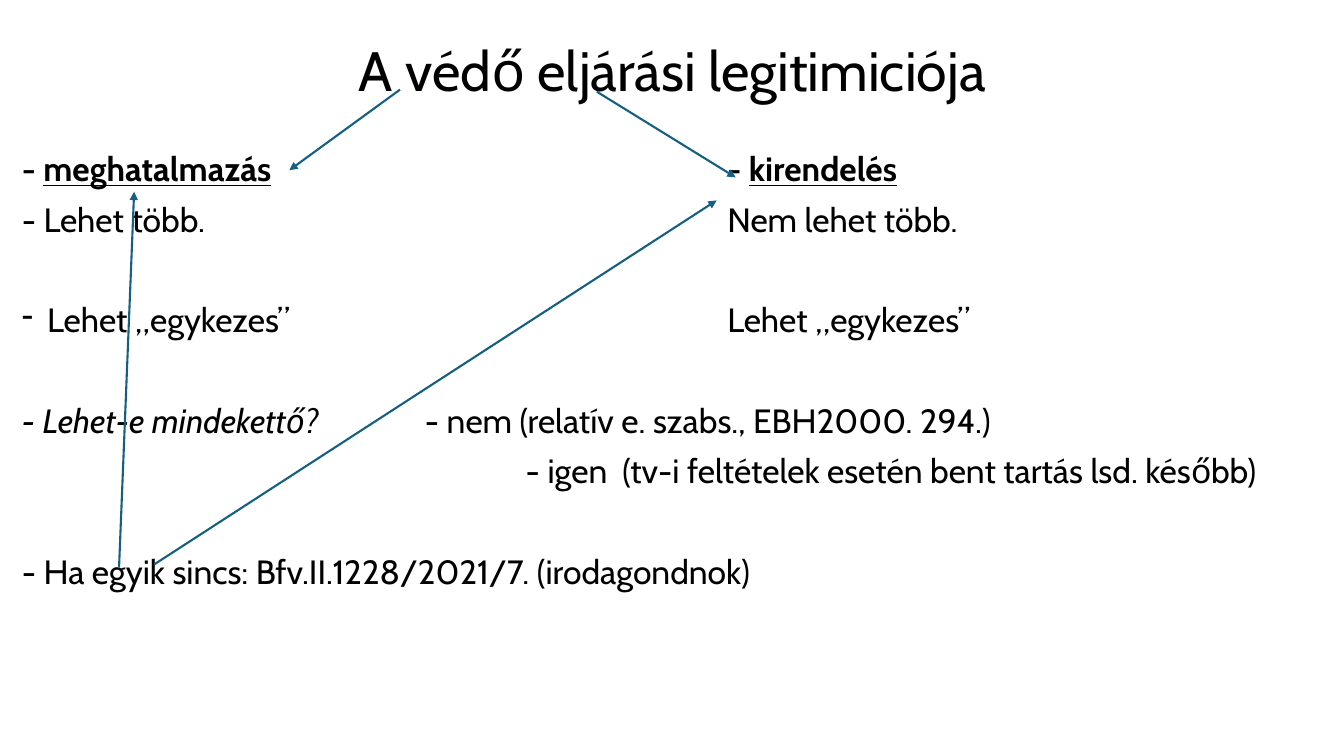
import lxml.etree
import pptx
import pptx.dml.color
import pptx.enum.shapes
import pptx.enum.text
import pptx.oxml.ns
import pptx.util

Cm = pptx.util.Cm
Pt = pptx.util.Pt

FONT = "Cabin"
COLORS = {"text": "000000", "arrow": "156082"}

TITLE = "A védő eljárási legitimiciója"
TITLE_AREA = (2.34, 1.02, 29.21, 1.65)
BODY_AREA = (0.3, 3.73, 33.12, 15.32)

# Space before a paragraph, in points
FIRST, NEXT, NEW_GROUP = 0, 10, 46

# Tab stops and hanging indent, in cm
RIGHT_COLUMN, NO_COLUMN, YES_COLUMN = 17.78, 10.16, 12.7
HANGING = 0.64

# Space before, tab stop, bullet, runs of (text, styles)
LINES = [
    (FIRST, RIGHT_COLUMN, None, [
        ("- ", "b"), ("meghatalmazás", "bu"), ("\t", ""),
        ("- ", "b"), ("kirendelés", "bu")]),
    (NEXT, RIGHT_COLUMN, None, [("- Lehet több.\tNem lehet több.", "")]),
    (NEW_GROUP, RIGHT_COLUMN, "-", [("Lehet „egykezes”\tLehet „egykezes”", "")]),
    (NEW_GROUP, NO_COLUMN, None, [
        ("- Lehet-e mindekettő?", "i"),
        ("\t- nem (relatív e. szabs., EBH2000. 294.)", "")]),
    (NEXT, YES_COLUMN, None, [
        ("\t- igen  (tv-i feltételek esetén bent tartás lsd. később)", "")]),
    (NEW_GROUP, None, None, [
        ("- Ha egyik sincs: Bfv.II.1228/2021/7. (irodagondnok)", "")]),
]

# Start x, start y, end x, end y in cm
ARROWS = [
    (10.08, 2.26, 7.29, 4.29),
    (15.04, 2.31, 18.54, 4.47),
    (3.89, 14.22, 18.06, 5.05),
    (3.0, 14.3, 3.38, 4.83),
]


def color(name):
    return pptx.dml.color.RGBColor.from_string(COLORS[name])


def add_element(parent, tag, **attributes):
    element = lxml.etree.SubElement(parent, pptx.oxml.ns.qn(tag))
    for name, value in attributes.items():
        element.set(name, str(value))
    return element


def add_box(slide, area):
    frame = slide.shapes.add_textbox(*map(Cm, area)).text_frame
    frame.word_wrap = True
    return frame


def add_span(para, text, size, styles=""):
    """Add one run; styles may hold b, i and u."""
    span = para.add_run()
    span.text = text
    span.font.name = FONT
    span.font.size = Pt(size)
    span.font.color.rgb = color("text")
    span.font.bold = "b" in styles
    span.font.italic = "i" in styles
    span.font.underline = "u" in styles


def add_title(slide):
    frame = add_box(slide, TITLE_AREA)
    frame.vertical_anchor = pptx.enum.text.MSO_ANCHOR.MIDDLE
    para = frame.paragraphs[0]
    para.alignment = pptx.enum.text.PP_ALIGN.CENTER
    para.line_spacing = 0.9
    add_span(para, TITLE, 39.6)


def add_body(slide):
    frame = add_box(slide, BODY_AREA)
    for index, (space, tab, bullet, spans) in enumerate(LINES):
        para = frame.add_paragraph() if index else frame.paragraphs[0]
        properties = para._p.get_or_add_pPr()
        if bullet:
            properties.set("marL", str(Cm(HANGING)))
            properties.set("indent", str(-Cm(HANGING)))
            add_element(properties, "a:buChar", char=bullet)
        if tab:
            tabs = add_element(properties, "a:tabLst")
            add_element(tabs, "a:tab", pos=Cm(tab), algn="l")
        para.line_spacing = 0.9
        para.space_before = Pt(space)
        for text, styles in spans:
            add_span(para, text, 24, styles)


def add_arrow(slide, ends):
    arrow = slide.shapes.add_connector(
        pptx.enum.shapes.MSO_CONNECTOR.STRAIGHT, *map(Cm, ends))
    arrow.line.color.rgb = color("arrow")
    arrow.line.width = Pt(1.5)
    add_element(arrow.line._get_or_add_ln(), "a:tailEnd", type="triangle")
    add_element(arrow._element.spPr, "a:effectLst")


def main():
    deck = pptx.Presentation()
    deck.slide_width, deck.slide_height = Cm(33.87), Cm(19.05)
    slide = deck.slides.add_slide(deck.slide_layouts[6])
    add_title(slide)
    add_body(slide)
    for ends in ARROWS:
        add_arrow(slide, ends)
    deck.save("out.pptx")


if __name__ == "__main__":
    main()
